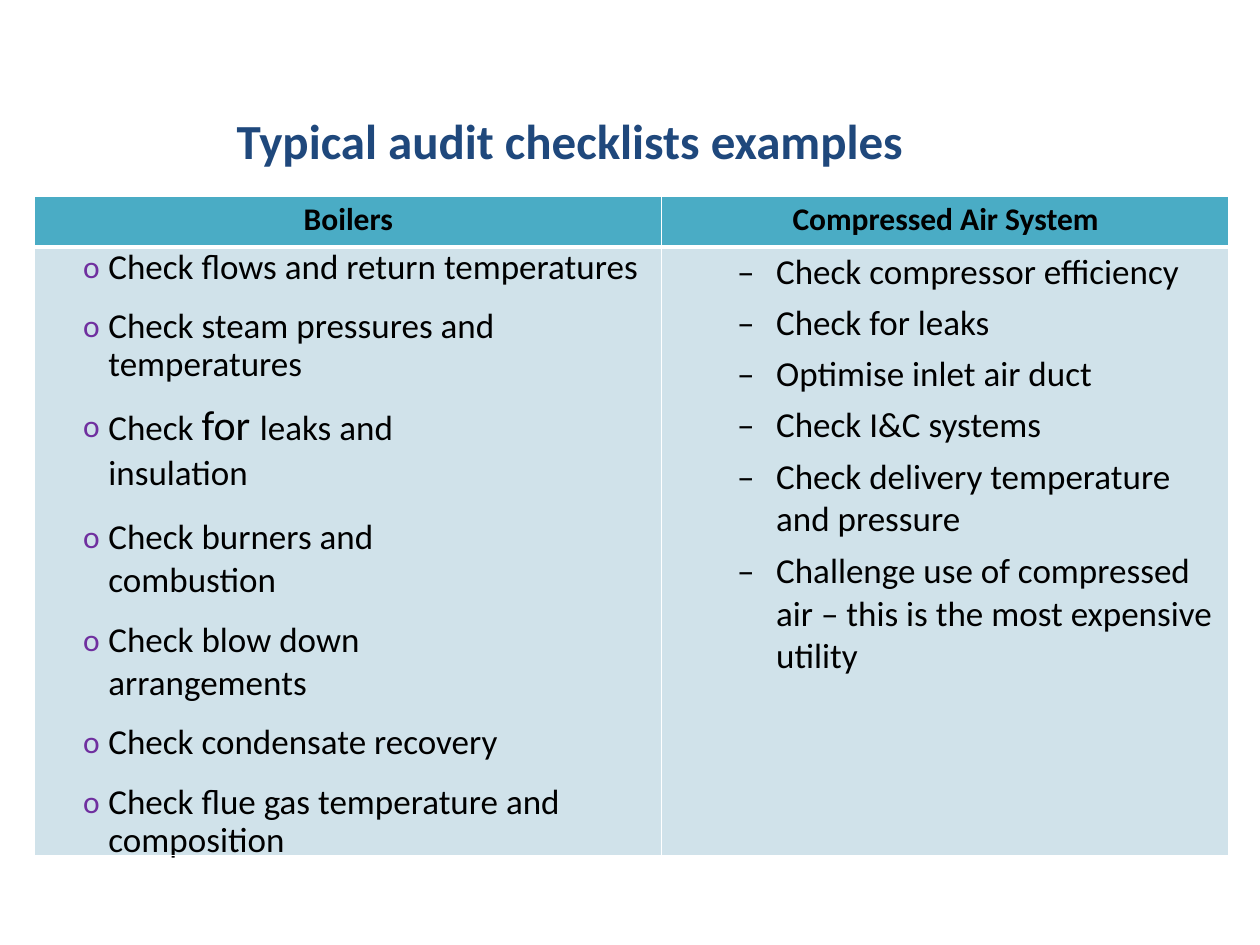
import pptx
import pptx.util
import pptx.dml.color
import pptx.enum.text
import pptx.oxml.ns
from lxml import etree

FONT = "Calibri"
HEADER_FILL, BODY_FILL = "4AACC5", "D0E2EA"
SLIDE_W, SLIDE_H = 10, 7.5
COLS = [4.98, 4.5]
ROWS = [0.4, 3.89]

BOILERS = [
    ([("Check flows and return temperatures", 20)], 0, 23.9, 0),
    ([("Check steam pressures and  temperatures", 20)], 12.3, 21.6, 0),
    ([("Check ", 20), ("for ", 24), ("leaks and insulation", 20)], 8.6, None, 1.5),
    ([("Check burners and combustion", 20)], 12.2, None, 1.5),
    ([("Check blow down arrangements", 20)], 9.7, None, 1.5),
    ([("Check condensate recovery", 20)], 9.6, None, 0),
    ([("Check flue gas temperature and  composition", 20)], 12.3, 21.6, 0),
]
COMPRESSED_AIR = [
    "Check compressor efficiency",
    "Check for leaks",
    "Optimise inlet air duct",
    "Check I&C systems",
    "Check delivery temperature  and pressure",
    "Challenge use of compressed  air – this is the most expensive  utility",
]


def inch(value):
    return pptx.util.Inches(value)


def rgb(value):
    return pptx.dml.color.RGBColor.from_string(value)


def child(parent, tag, **attrs):
    return etree.SubElement(parent, pptx.oxml.ns.qn("a:" + tag), attrs)


def add_run(p, text, size, color="000000", bold=False):
    r = p.add_run()
    r.text = text
    r.font.name = FONT
    r.font.size = pptx.util.Pt(size)
    r.font.bold = bold
    r.font.color.rgb = rgb(color)


def set_margins(p, left, hanging=0, right=0):
    pPr = p._p.get_or_add_pPr()
    pPr.set("marL", str(inch(left)))
    pPr.set("indent", str(-inch(hanging)))
    pPr.set("marR", str(inch(right)))


def set_bullet(p, char, color=None, percent=100):
    pPr = p._p.get_or_add_pPr()
    if color:
        child(child(pPr, "buClr"), "srgbClr", val=color)
    child(pPr, "buSzPct", val=str(percent * 1000))
    child(pPr, "buFont", typeface=FONT)
    child(pPr, "buChar", char=char)


def next_paragraph(tf, i):
    return tf.add_paragraph() if i else tf.paragraphs[0]


def style_cell(cell, fill, top, bottom, inset):
    cell.margin_left = cell.margin_right = cell.margin_bottom = 0
    cell.margin_top = inch(inset)
    tcPr = cell._tc.get_or_add_tcPr()
    for side, width in (("L", 1), ("R", 1), ("T", top), ("B", bottom)):
        ln = child(tcPr, "ln" + side, w=str(pptx.util.Pt(width)))
        child(child(ln, "solidFill"), "srgbClr", val="FFFFFF")
    cell.fill.solid()
    cell.fill.fore_color.rgb = rgb(fill)


def add_title(s, text):
    box = s.shapes.add_textbox(inch(1.64), inch(0.86), inch(5.85), inch(0.49))
    tf = box.text_frame
    tf.word_wrap = True
    tf.margin_left = tf.margin_right = tf.margin_bottom = 0
    tf.margin_top = inch(0.01)
    tf.vertical_anchor = pptx.enum.text.MSO_ANCHOR.MIDDLE
    p = tf.paragraphs[0]
    p.alignment = pptx.enum.text.PP_ALIGN.CENTER
    add_run(p, text, 28, "1F487C", True)


def fill_header(cell, text, left, align):
    style_cell(cell, HEADER_FILL, 1, 3, 0.03)
    p = cell.text_frame.paragraphs[0]
    p.alignment = align
    p.space_before = pptx.util.Pt(2.4)
    set_margins(p, left)
    add_run(p, text, 18, bold=True)


def fill_boilers(cell):
    style_cell(cell, BODY_FILL, 3, 1, 0)
    for i, (runs, before, spacing, right) in enumerate(BOILERS):
        p = next_paragraph(cell.text_frame, i)
        if spacing:
            p.line_spacing = pptx.util.Pt(spacing)
        p.space_before = pptx.util.Pt(before)
        set_margins(p, 0.59, 0.2, right)
        set_bullet(p, "o", "6F2F9F", 90)
        for text, size in runs:
            add_run(p, text, size)


def fill_compressed_air(cell):
    style_cell(cell, BODY_FILL, 3, 1, 0.03)
    for i, text in enumerate(COMPRESSED_AIR):
        p = next_paragraph(cell.text_frame, i)
        p.space_before = pptx.util.Pt(4.8 if i else 2.4)
        set_margins(p, 0.91, 0.31)
        set_bullet(p, "–")
        add_run(p, text, 20)


def add_checklists(s):
    frame = s.shapes.add_table(len(ROWS), len(COLS), inch(0.27), inch(1.56),
                               inch(sum(COLS)), inch(sum(ROWS)))
    table = frame.table
    table.first_row = table.horz_banding = False
    for column, width in zip(table.columns, COLS):
        column.width = inch(width)
    for row, height in zip(table.rows, ROWS):
        row.height = inch(height)
    align = pptx.enum.text.PP_ALIGN
    fill_header(table.cell(0, 0), "Boilers", 0.01, align.CENTER)
    fill_header(table.cell(0, 1), "Compressed Air System", 1.04, align.LEFT)
    fill_boilers(table.cell(1, 0))
    fill_compressed_air(table.cell(1, 1))


def main():
    prs = pptx.Presentation()
    prs.slide_width, prs.slide_height = inch(SLIDE_W), inch(SLIDE_H)
    s = prs.slides.add_slide(prs.slide_layouts[6])
    add_title(s, "Typical audit checklists examples ")
    add_checklists(s)
    prs.save("out.pptx")


if __name__ == "__main__":
    main()
